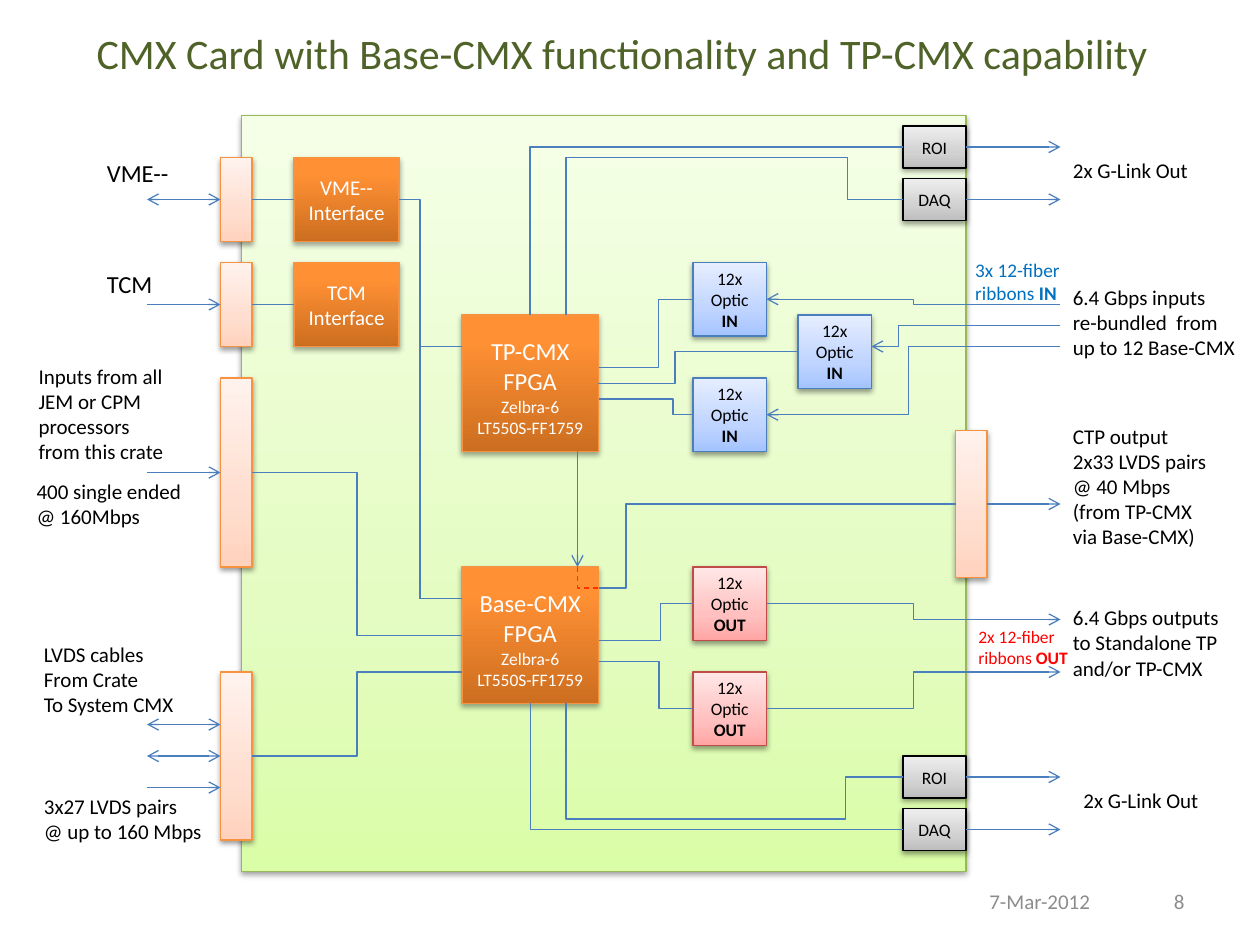
from copy import deepcopy

from lxml.etree import SubElement
from pptx import Presentation
from pptx.dml.color import RGBColor
from pptx.enum.dml import MSO_LINE_DASH_STYLE as Dash
from pptx.enum.shapes import MSO_CONNECTOR as Connector, MSO_SHAPE as Shape
from pptx.enum.text import MSO_ANCHOR as Anchor, MSO_AUTO_SIZE as AutoSize, PP_ALIGN as Align
from pptx.oxml.ns import qn
from pptx.util import Cm, Pt

GRID_CM = 2.54 / 12
BLACK = RGBColor(0x00, 0x00, 0x00)
WHITE = RGBColor(0xFF, 0xFF, 0xFF)
RED = RGBColor(0xFF, 0x00, 0x00)
BLUE = RGBColor(0x00, 0x70, 0xC0)
GRAY = RGBColor(0x8C, 0x8C, 0x8C)
TITLE_GREEN = RGBColor(0x4F, 0x62, 0x28)
WIRE_BLUE = RGBColor(0x4B, 0x7E, 0xBC)
WIRE_RED = RGBColor(0xFF, 0x33, 0x00)
GREEN_LINE = RGBColor(0x98, 0xB9, 0x55)
ORANGE_LINE = RGBColor(0xF6, 0x92, 0x40)
RED_LINE = RGBColor(0xBF, 0x4C, 0x48)
GREEN_STOPS = ((0, RGBColor(0xDA, 0xFD, 0xA7)), (0.35, RGBColor(0xE4, 0xFC, 0xC2)),
               (1, RGBColor(0xF5, 0xFF, 0xE7)))
PEACH_STOPS = ((0, RGBColor(0xFF, 0xD2, 0xBD)), (0.35, RGBColor(0xFF, 0xDE, 0xD0)),
               (1, RGBColor(0xFF, 0xF2, 0xED)))
ORANGE_STOPS = ((0, RGBColor(0xCC, 0x6E, 0x20)), (0.8, RGBColor(0xFF, 0x90, 0x34)),
                (1, RGBColor(0xFF, 0x91, 0x36)))
RED_STOPS = ((0, RGBColor(0xFF, 0xA6, 0xA5)), (0.35, RGBColor(0xFF, 0xC0, 0xBF)),
             (1, RGBColor(0xFF, 0xE7, 0xE7)))
BLUE_STOPS = ((0, RGBColor(0xA4, 0xC4, 0xFF)), (0.35, RGBColor(0xBF, 0xD4, 0xFF)),
              (1, RGBColor(0xE6, 0xEE, 0xFF)))
GRAY_STOPS = ((0, RGBColor(0xBD, 0xBD, 0xBD)), (0.35, RGBColor(0xD1, 0xD1, 0xD1)),
              (1, RGBColor(0xEE, 0xEE, 0xEE)))


def grid(*values):
    return [Cm(value * GRID_CM) for value in values]


def write_text(frame, lines, size=12, color=BLACK, align=Align.LEFT, anchor=Anchor.TOP, wrap=False):
    frame.word_wrap = wrap
    frame.auto_size = AutoSize.NONE
    frame.vertical_anchor = anchor
    for index, line in enumerate(lines):
        paragraph = frame.add_paragraph() if index else frame.paragraphs[0]
        paragraph.alignment = align
        for text, style in [(line, {})] if isinstance(line, str) else line:
            run = paragraph.add_run()
            run.text = text
            run.font.name = "Calibri"
            run.font.size = Pt(style.get("size", size))
            run.font.bold = style.get("bold", False)
            run.font.color.rgb = color


def add_label(slide, place, lines, **text_format):
    box = slide.shapes.add_textbox(*grid(*place))
    write_text(box.text_frame, lines, **text_format)


def add_block(slide, place, stops, line_color, lines=(), **text_format):
    shape = slide.shapes.add_shape(Shape.RECTANGLE, *grid(*place))
    shape.fill.gradient()
    shape.fill.gradient_angle = 90
    stop_list = shape.element.spPr.find(".//" + qn("a:gsLst"))
    stop_list.append(deepcopy(stop_list[0]))
    for stop, (position, color) in zip(shape.fill.gradient_stops, stops):
        stop.position = position
        stop.color.rgb = color
    shape.line.color.rgb = line_color
    shape.line.width = Pt(0.75)
    add_shadow(shape, stops is ORANGE_STOPS)
    write_text(shape.text_frame, lines, align=Align.CENTER, anchor=Anchor.MIDDLE,
               wrap=True, **text_format)


def add_shadow(shape, strong):
    shape.shadow.inherit = False
    effects = shape.element.spPr.find(qn("a:effectLst"))
    shadow = SubElement(effects, qn("a:outerShdw"), blurRad="40000",
                        dist="23000" if strong else "20000", dir="5400000", rotWithShape="0")
    color = SubElement(shadow, qn("a:srgbClr"), val="000000")
    SubElement(color, qn("a:alpha"), val="35000" if strong else "38000")


def add_wire(slide, start, end, bend=None, head=False, tail=False, color=WIRE_BLUE, dashed=False):
    kind = Connector.STRAIGHT if bend is None else Connector.ELBOW
    wire = slide.shapes.add_connector(kind, *grid(*start, *end))
    wire.line.color.rgb = color
    wire.line.width = Pt(0.75)
    if dashed:
        wire.line.dash_style = Dash.DASH
    properties = wire._element.spPr
    if bend is not None:
        share = round((bend - start[0]) / (end[0] - start[0]) * 100000)
        guides = properties.find(qn("a:prstGeom")).get_or_add_avLst()
        SubElement(guides, qn("a:gd"), name="adj1", fmla=f"val {share}")
    for tag, present in (("a:headEnd", head), ("a:tailEnd", tail)):
        if present:
            SubElement(properties.find(qn("a:ln")), qn(tag), type="arrow")
    SubElement(properties, qn("a:effectLst"))


def add_blocks(slide):
    add_block(slide, (23, 11, 69, 72), GREEN_STOPS, GREEN_LINE)
    for left, top, height in ((21, 15, 8), (21, 25, 8), (21, 36, 18), (21, 64, 16), (91, 41, 14)):
        add_block(slide, (left, top, 3, height), PEACH_STOPS, ORANGE_LINE)
    for top, name in ((15, "VME--"), (25, "TCM")):
        add_block(slide, (28, top, 10, 8), ORANGE_STOPS, ORANGE_LINE,
                  [f"{name} Interface"], color=WHITE)
    for top, name in ((30, "TP-CMX"), (54, "Base-CMX")):
        heading = [(name, {"size": 14}), (" ", {"size": 18}), ("FPGA", {"size": 14})]
        add_block(slide, (44, top, 13, 13), ORANGE_STOPS, ORANGE_LINE,
                  [heading, "Zelbra-6", "LT550S-FF1759"], size=10, color=WHITE)
    for left, top, way, stops, line_color in (
            (66, 64, "OUT", RED_STOPS, RED_LINE), (66, 54, "OUT", RED_STOPS, RED_LINE),
            (66, 25, "IN", BLUE_STOPS, WIRE_BLUE), (66, 36, "IN", BLUE_STOPS, WIRE_BLUE),
            (76, 30, "IN", BLUE_STOPS, WIRE_BLUE)):
        add_block(slide, (left, top, 7, 7), stops, line_color,
                  [[("12x Optic ", {}), (way, {"bold": True})]], size=10)
    for top, name in ((77, "DAQ"), (72, "ROI"), (17, "DAQ"), (12, "ROI")):
        add_block(slide, (86, top, 6, 4), GRAY_STOPS, BLACK, [name], size=10)


def add_wires(slide):
    for start, end, bend in (
            ((57, 63), (66, 67.5), 62.75), ((57, 61), (66, 57.5), 62.9),
            ((57, 56), (91, 48), 59.62), ((57, 38), (66, 39.5), 64.1),
            ((57, 36.5), (76, 33.5), 64.3), ((57, 35), (66, 28.5), 62.7),
            ((24, 45), (44, 60.5), 34), ((24, 72), (44, 64), 34),
            ((38, 19), (40, 57), 40), ((50.5, 67), (86, 79), 50.5),
            ((75, 78), (86, 74), 80.5), ((53.9, 67), (75, 78), 53.9),
            ((86, 14), (50.5, 30), 50.5), ((86, 19), (72, 15), 80.75),
            ((53.9, 30), (72, 15), 53.9)):
        add_wire(slide, start, end, bend)
    for start, end, bend in (
            ((73, 57.5), (101, 59), 87), ((73, 67.5), (101, 64), 87),
            ((101, 33), (73, 39.5), 86.5), ((101, 31), (83, 33), 85.6),
            ((101, 29), (73, 28.5), 87)):
        add_wire(slide, start, end, bend, tail=True)
    for left, right, y in ((24, 28, 19), (24, 28, 29), (40, 44, 33), (40, 44, 57)):
        add_wire(slide, (left, y), (right, y))
    for y in (14, 19, 74, 79):
        add_wire(slide, (92, y), (101, y), tail=True)
    for y, both_ways in ((19, True), (29, False), (45, False), (69, True), (72, True), (75, False)):
        add_wire(slide, (14, y), (21, y), head=both_ways, tail=True)
    add_wire(slide, (94, 48), (101, 48), tail=True)
    add_wire(slide, (55, 43), (55, 54), tail=True)
    add_wire(slide, (55, 54), (57, 56), 55, color=WIRE_RED, dashed=True)


def add_labels(slide):
    add_label(slide, (9, 14.5, 8.4, 4), ["VME--"], size=14)
    add_label(slide, (9, 25, 6.8, 4), ["TCM"], size=14)
    for place, lines in (
            ((2.5, 34, 14.4, 10.9), ["Inputs from all", "JEM or CPM", "processors", "from this crate"]),
            ((3, 60.5, 15.4, 8.5), ["LVDS cables", "From Crate", "To System CMX"]),
            ((2.3, 45, 16.3, 6), ["400 single ended", "@ 160Mbps"]),
            ((3, 75, 17.6, 6), ["3x27 LVDS pairs", "@ up to 160 Mbps"]),
            ((101, 57, 16.4, 8.5), ["6.4 Gbps outputs", "to Standalone TP", "and/or TP-CMX"]),
            ((102, 74.4, 13.6, 3.6), ["2x G-Link Out"]),
            ((101, 14.4, 13.6, 3.6), ["2x G-Link Out"]),
            ((101, 26.5, 18, 8.5), ["6.4 Gbps inputs", "re-bundled  from", "up to 12 Base-CMX"]),
            ((101, 39.7, 15.2, 13.3), ["CTP output", "2x33 LVDS pairs", "@ 40 Mbps",
                                       "(from TP-CMX", "via Base-CMX)"])):
        add_label(slide, place, lines)
    for place, count, way, size, color in (
            ((92, 59, 10.9, 5.3), 2, "OUT", 10, RED), ((91.7, 24, 10.6, 5.6), 3, "IN", 11, BLUE)):
        add_label(slide, place, [f"{count}x 12-fiber", [("ribbons ", {}), (way, {"bold": True})]],
                  size=size, color=color)
    for left, width, text in ((77, 28, "7-Mar-2012"), (107, 7, "8")):
        add_label(slide, (left, 83.4, width, 4.8), [text], color=GRAY, align=Align.RIGHT,
                  anchor=Anchor.MIDDLE, wrap=True)


def add_title(slide):
    title = slide.shapes.title
    title.left, title.top, title.width, title.height = grid(8, 2, 103.6, 6)
    write_text(title.text_frame, ["CMX Card with Base-CMX functionality and TP-CMX capability"],
               size=24, color=TITLE_GREEN)


def main():
    presentation = Presentation()
    presentation.slide_width, presentation.slide_height = Cm(25.4), Cm(19.05)
    slide = presentation.slides.add_slide(presentation.slide_layouts[5])
    add_title(slide)
    add_blocks(slide)
    add_wires(slide)
    add_labels(slide)
    presentation.save("out.pptx")


if __name__ == "__main__":
    main()
